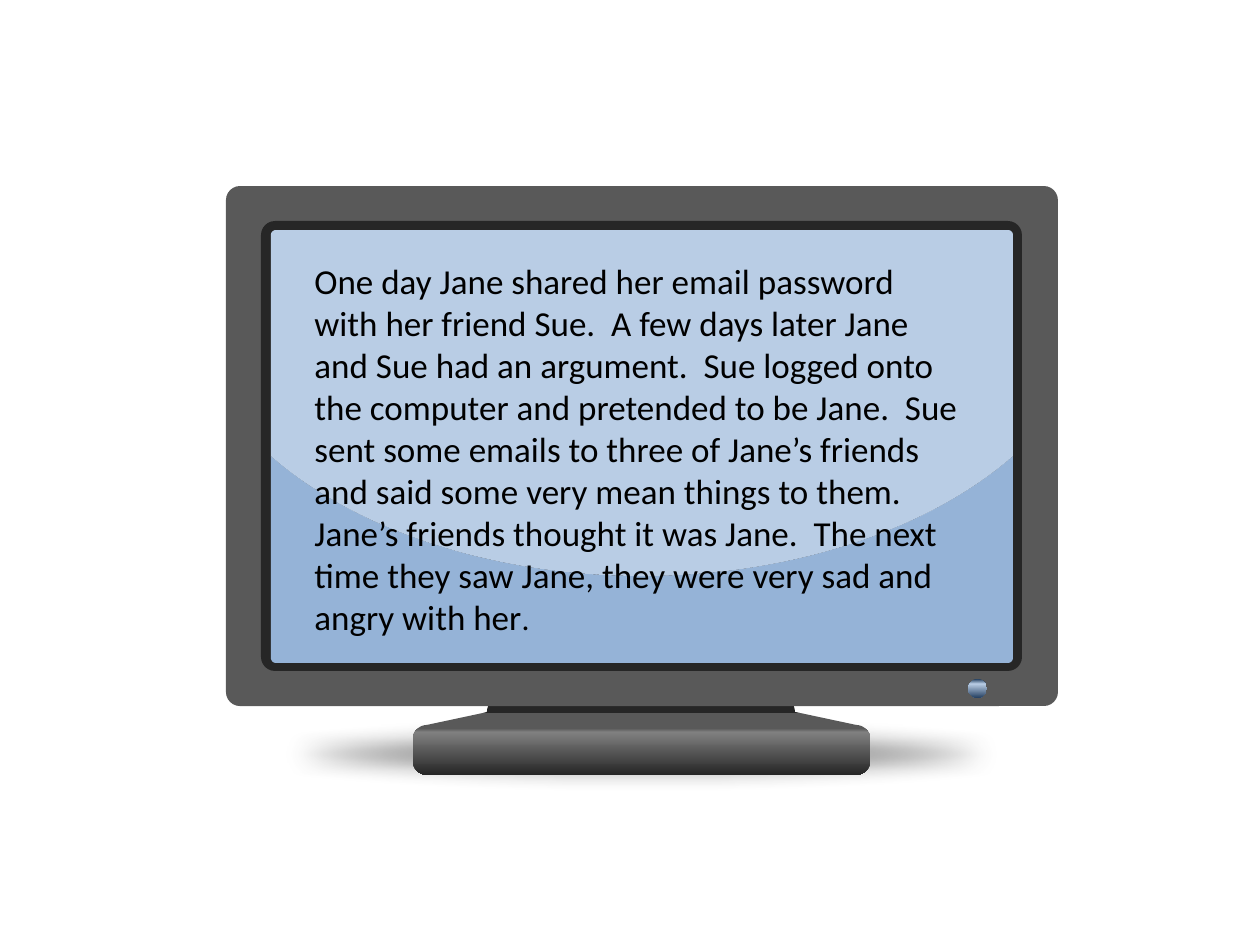
"""Build a slide showing a story on a flat television screen."""
from math import acos, cos, degrees, radians, sin

from lxml.etree import SubElement
from pptx import Presentation
from pptx.dml.color import RGBColor
from pptx.enum.shapes import MSO_SHAPE as Shape
from pptx.enum.text import MSO_AUTO_SIZE as AutoSize
from pptx.oxml.ns import qn
from pptx.util import Pt

STORY = [
    ("One day Jane shared her email password with her friend Sue.  "
     "A few days later Jane and Sue had an argument.  Sue logged onto the "
     "computer and pretended to be Jane.  Sue sent some emails to three of "
     "Jane’s friends and said some very mean things to them.  Jane’s friends "
     "thought it was Jane.  The next time they saw Jane, they were very sad "
     "and angry with her", 20),
    (".", 18),
]
COLORS = {
    "frame": "595959", "dark": "262626", "shine": "808080", "shadow": "404040",
    "screen": "95B3D7", "glare": "B9CDE5", "navy": "254061", "text": "000000",
}
BASE_STOPS = [(0, "frame"), (25, "frame"), (31, "shine"), (100, "dark")]
BUTTON_STOPS = [(1, "navy"), (26, "glare"), (100, "navy")]
SCALE = 914400 / 126


def px(length):
    return round(length * SCALE)


def color(name):
    return RGBColor.from_string(COLORS[name])


def arc(center_x, center_y, radius_x, radius_y, start, end, steps=8):
    angles = [radians(start + (end - start) * i / steps) for i in range(steps + 1)]
    return [(center_x + radius_x * cos(a), center_y + radius_y * sin(a)) for a in angles]


def paint(shape, fill):
    shape.shadow.inherit = False
    shape.line.fill.background()
    if isinstance(fill, str):
        shape.fill.solid()
        shape.fill.fore_color.rgb = color(fill)
        return shape
    shape.fill.gradient()
    gradient = shape._element.spPr.find(qn("a:gradFill"))
    for child in list(gradient):
        gradient.remove(child)
    stops = SubElement(gradient, qn("a:gsLst"))
    for position, name in fill:
        stop = SubElement(stops, qn("a:gs"), pos=str(position * 1000))
        SubElement(stop, qn("a:srgbClr"), val=COLORS[name])
    SubElement(gradient, qn("a:lin"), ang="5400000", scaled="0")
    return shape


def preset(group, kind, bounds, fill, radius=None):
    shape = group.shapes.add_shape(kind, *map(px, bounds))
    if radius:
        shape.adjustments[0] = radius / min(bounds[2:])
    return paint(shape, fill)


def outline(group, points, fill):
    corners = [(px(x), px(y)) for x, y in points]
    builder = group.shapes.build_freeform(*corners[0])
    builder.add_line_segments(corners[1:], close=True)
    return paint(builder.convert_to_shape(), fill)


def add_shadow(group):
    shadow = preset(group, Shape.OVAL, (198, 716, 887, 76), "shadow")
    properties = shadow._element.spPr
    tint = properties.find(qn("a:solidFill")).find(qn("a:srgbClr"))
    SubElement(tint, qn("a:alpha"), val="60000")
    SubElement(properties.find(qn("a:effectLst")), qn("a:softEdge"), rad="158750")


def add_television(group):
    add_shadow(group)

    joint = [(800, 713), (483, 713)]
    base = (arc(427, 739, 14, 14, 270, 180) + arc(427, 761, 14, 14, 180, 90)
            + arc(856, 761, 14, 14, 90, 0) + arc(856, 739, 14, 14, 0, -90))
    neck = arc(500, 712, 13, 14, 180, 270) + arc(782, 712, 13, 14, 270, 360)
    outline(group, base + joint, BASE_STOPS)
    outline(group, neck + joint, "dark")

    preset(group, Shape.ROUNDED_RECTANGLE, (226, 186, 832, 520), "frame", 14)
    preset(group, Shape.ROUNDED_RECTANGLE, (261, 221, 761, 450), "dark", 14)

    edge = degrees(acos(371 / 460))
    curve = arc(642, 283, 460, 293, edge, 180 - edge, 60)
    lower = arc(1008, 658, 5, 5, 0, 90) + arc(276, 658, 5, 5, 90, 180)
    upper = arc(276, 235, 5, 5, 180, 270) + arc(1008, 235, 5, 5, 270, 360)
    outline(group, curve[::-1] + lower, "screen")
    outline(group, upper + curve, "glare")
    preset(group, Shape.OVAL, (968, 679, 19, 19), BUTTON_STOPS)


def add_story(page):
    box = page.shapes.add_textbox(*map(px, (302, 253, 675, 394)))
    frame = box.text_frame
    frame.word_wrap = True
    frame.auto_size = AutoSize.SHAPE_TO_FIT_TEXT
    para = frame.paragraphs[0]
    for text, size in STORY:
        span = para.add_run()
        span.text = text
        span.font.name = "Calibri"
        span.font.size = Pt(size)
        span.font.color.rgb = color("text")


def main():
    deck = Presentation()
    deck.slide_width, deck.slide_height = px(1260), px(945)
    page = deck.slides.add_slide(deck.slide_layouts[6])
    add_television(page.shapes.add_group_shape())
    add_story(page)
    deck.save("out.pptx")


if __name__ == "__main__":
    main()
